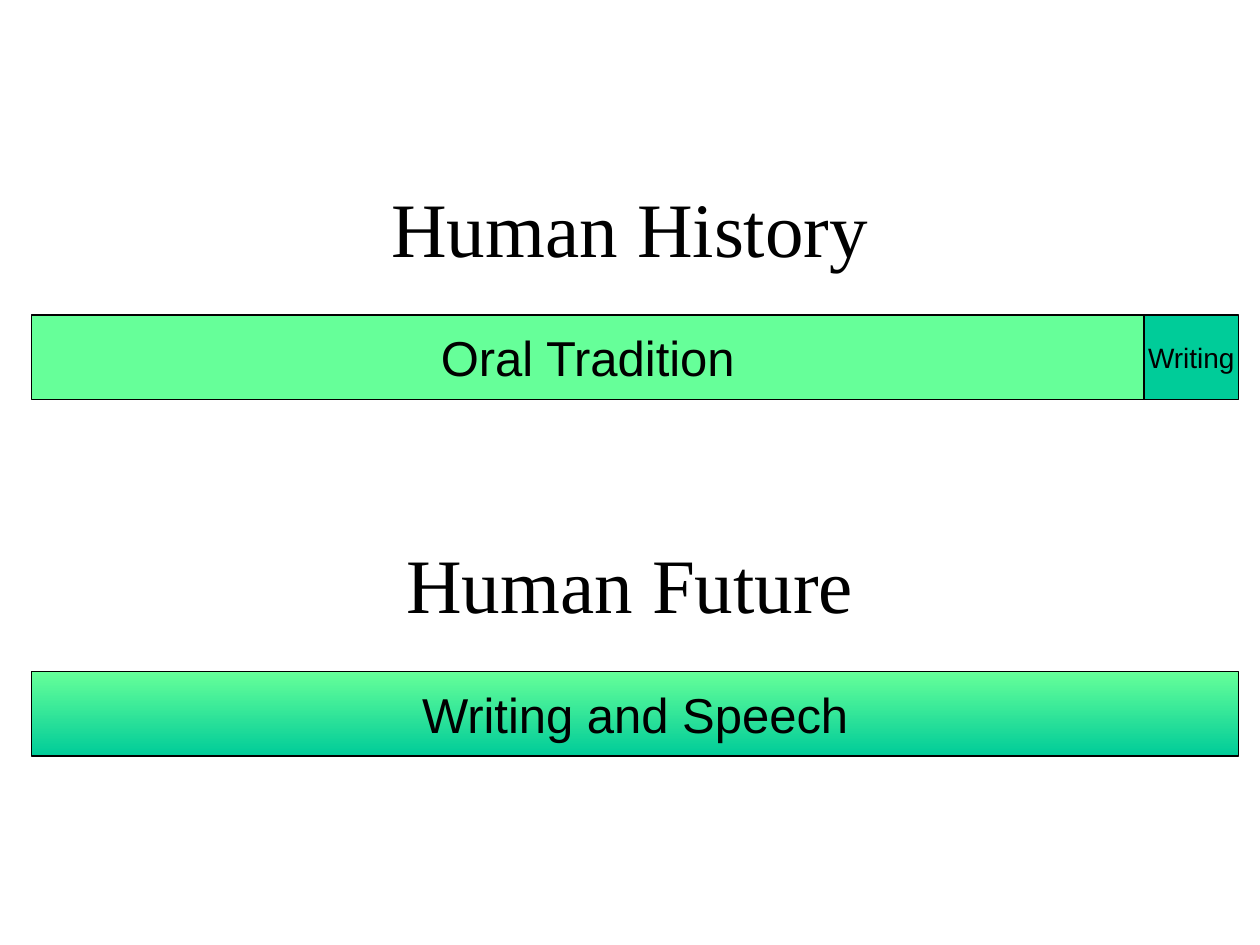
from pptx import Presentation
from pptx.dml.color import RGBColor
from pptx.enum import shapes, text
from pptx.util import Inches, Pt

BLACK = "000000"
SPEECH = "66FF99"
WRITING = "00CC99"
BAR_LEFT = 0.25
BAR_WIDTH = 9.58
BAR_HEIGHT = 0.67
WRITING_WIDTH = 0.75


def color(value):
    return RGBColor.from_string(value)


def write(shape, words, size, font, wrap):
    frame = shape.text_frame
    frame.word_wrap = wrap
    frame.vertical_anchor = text.MSO_ANCHOR.MIDDLE
    paragraph = frame.paragraphs[0]
    paragraph.alignment = text.PP_ALIGN.CENTER
    run = paragraph.add_run()
    run.text = words
    for name, value in {"size": Pt(size), "name": font}.items():
        setattr(run.font, name, value)
    run.font.color.rgb = color(BLACK)


def add_heading(slide, box, words):
    shape = slide.shapes.add_textbox(*map(Inches, box))
    write(shape, words, 44, "Times New Roman", True)


def add_bar(slide, box, words, size, fills):
    shape = slide.shapes.add_shape(shapes.MSO_SHAPE.RECTANGLE, *map(Inches, box))
    shape.shadow.inherit = False
    if len(fills) == 1:
        shape.fill.solid()
        shape.fill.fore_color.rgb = color(fills[0])
    else:
        shape.fill.gradient()
        shape.fill.gradient_angle = 270
        for stop, fill in zip(shape.fill.gradient_stops, fills):
            stop.color.rgb = color(fill)
    shape.line.color.rgb = color(BLACK)
    shape.line.width = Pt(0.75)
    write(shape, words, size, "Arial", False)


def add_era(slide, heading, heading_top, bar_top, segments):
    add_heading(slide, (0.5, heading_top, 9, 1.25), heading)
    left = BAR_LEFT
    for words, width, size, fills in segments:
        add_bar(slide, (left, bar_top, width, BAR_HEIGHT), words, size, fills)
        left += width


def main():
    presentation = Presentation()
    presentation.slide_width = Inches(10)
    presentation.slide_height = Inches(7.5)
    slide = presentation.slides.add_slide(presentation.slide_layouts[6])
    add_era(slide, "Human History", 1.17, 2.5, [
        ("Oral Tradition", BAR_WIDTH - WRITING_WIDTH, 28, [SPEECH]),
        ("Writing", WRITING_WIDTH, 16, [WRITING]),
    ])
    add_era(slide, "Human Future", 4, 5.33, [
        ("Writing and Speech", BAR_WIDTH, 28, [SPEECH, WRITING]),
    ])
    presentation.save("out.pptx")


if __name__ == "__main__":
    main()
